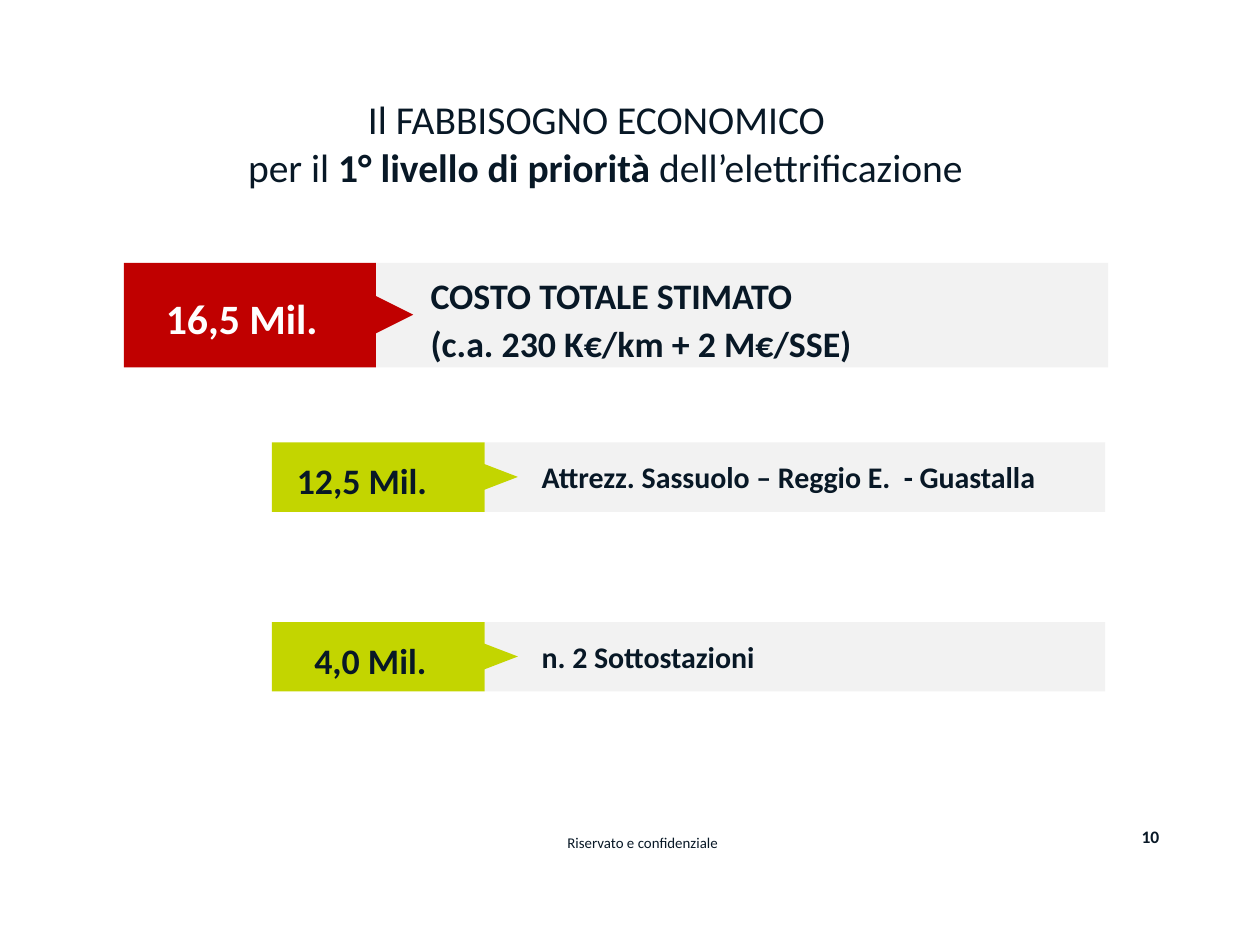
"""Build the slide on the funding needed for the first electrification priority."""
import dataclasses
import typing

import pptx
import pptx.dml.color
import pptx.enum.shapes
import pptx.enum.text
import pptx.util

Cm = pptx.util.Cm
Pt = pptx.util.Pt
Align = pptx.enum.text.PP_ALIGN
Anchor = pptx.enum.text.MSO_ANCHOR
Kind = pptx.enum.shapes.MSO_SHAPE

HUES = {
    "ink": "081826",
    "white": "FFFFFF",
    "band": "F2F2F2",
    "red": "C00000",
    "lime": "C3D500",
}


class Run(typing.NamedTuple):
    text: str
    bold: bool = False


class Box(typing.NamedTuple):
    left: float
    top: float
    width: float
    height: float


@dataclasses.dataclass
class Style:
    size: float
    hue: str = "ink"
    align: Align = Align.CENTER
    anchor: Anchor = Anchor.TOP
    space: float = 1.0


@dataclasses.dataclass
class Row:
    hue: str
    tag: Box
    end: float
    tip: Box
    cost: str
    cost_box: Box
    cost_style: Style
    lines: list[str]
    note_box: Box
    note_size: float


def rgb(hue: str) -> pptx.dml.color.RGBColor:
    """Return the colour of a named hue."""
    return pptx.dml.color.RGBColor.from_string(HUES[hue])


def add_text(slide, box: Box, paras: list[list[Run]], style: Style) -> None:
    """Add a text box, run by run."""
    frame = slide.shapes.add_textbox(*map(Cm, box)).text_frame
    frame.word_wrap = True
    frame.vertical_anchor = style.anchor
    for i, runs in enumerate(paras):
        para = frame.add_paragraph() if i else frame.paragraphs[0]
        para.alignment = style.align
        para.line_spacing = style.space
        for item in runs:
            run = para.add_run()
            run.text = item.text
            run.font.name = "Calibri"
            run.font.size = Pt(style.size)
            run.font.bold = item.bold
            run.font.color.rgb = rgb(style.hue)


def add_shape(slide, kind: Kind, box: Box, hue: str, turn: float = 0) -> None:
    """Add a flat filled shape without an outline."""
    shape = slide.shapes.add_shape(kind, *map(Cm, box))
    shape.shadow.inherit = False
    shape.fill.solid()
    shape.fill.fore_color.rgb = rgb(hue)
    shape.line.fill.background()
    shape.rotation = turn


def add_row(slide, row: Row) -> None:
    """Draw a cost tag pointing at its note on a grey band."""
    start = row.tag.left + row.tag.width
    band = Box(start, row.tag.top, row.end - start, row.tag.height)
    add_shape(slide, Kind.RECTANGLE, band, "band")
    add_shape(slide, Kind.RECTANGLE, row.tag, row.hue)
    add_shape(slide, Kind.ISOSCELES_TRIANGLE, row.tip, row.hue, 90)
    add_text(slide, row.cost_box, [[Run(row.cost, True)]], row.cost_style)
    note = Style(row.note_size, align=Align.LEFT, space=1.1)
    add_text(slide, row.note_box, [[Run(line, True)] for line in row.lines], note)


def part(cost: str, note: str, top: float, left: float, width: float) -> Row:
    """Describe one of the lime rows that make up the total."""
    return Row(
        "lime", Box(5.48, top, 4.29, 1.4), 22.28,
        Box(9.83, top + 0.35, 0.53, 0.69),
        cost, Box(left, top + 0.2, width, 1.14), Style(20.5),
        [note], Box(10.67, top + 0.13, 11.18, 1.07), 17.1,
    )


def main() -> None:
    """Build and save the slide."""
    deck = pptx.Presentation()
    deck.slide_width, deck.slide_height = Cm(25.4), Cm(19.05)
    slide = deck.slides.add_slide(deck.slide_layouts[6])

    title = [
        [Run("Il FABBISOGNO ECONOMICO ")],
        [Run(" per il "), Run("1° livello di priorità ", True),
         Run("dell’elettrificazione")],
    ]
    add_text(slide, Box(1.93, 1.8, 20.37, 2.2), title, Style(22.6))

    rows = [
        Row(
            "red", Box(2.5, 5.3, 5.08, 2.11), 22.34,
            Box(7.52, 5.94, 0.81, 0.81),
            "16,5 Mil.", Box(2.08, 5.77, 5.59, 2.06), Style(23.9, "white"),
            ["COSTO TOTALE STIMATO", "(c.a. 230 K€/km + 2 M€/SSE)"],
            Box(8.43, 5.31, 13.26, 2.62), 20.5,
        ),
        part("12,5 Mil.", "Attrezz. Sassuolo – Reggio E.  - Guastalla",
             8.92, 5.51, 3.58),
        part("4,0 Mil.", "n. 2 Sottostazioni", 12.54, 5.87, 3.2),
    ]
    for row in rows:
        add_row(slide, row)

    add_text(slide, Box(9.17, 16.51, 7.57, 0.97),
             [[Run("Riservato e confidenziale")]],
             Style(8.5, anchor=Anchor.MIDDLE))
    add_text(slide, Box(20.75, 16.38, 2.87, 0.97), [[Run("10", True)]],
             Style(10, align=Align.RIGHT, anchor=Anchor.MIDDLE))
    deck.save("out.pptx")


if __name__ == "__main__":
    main()
